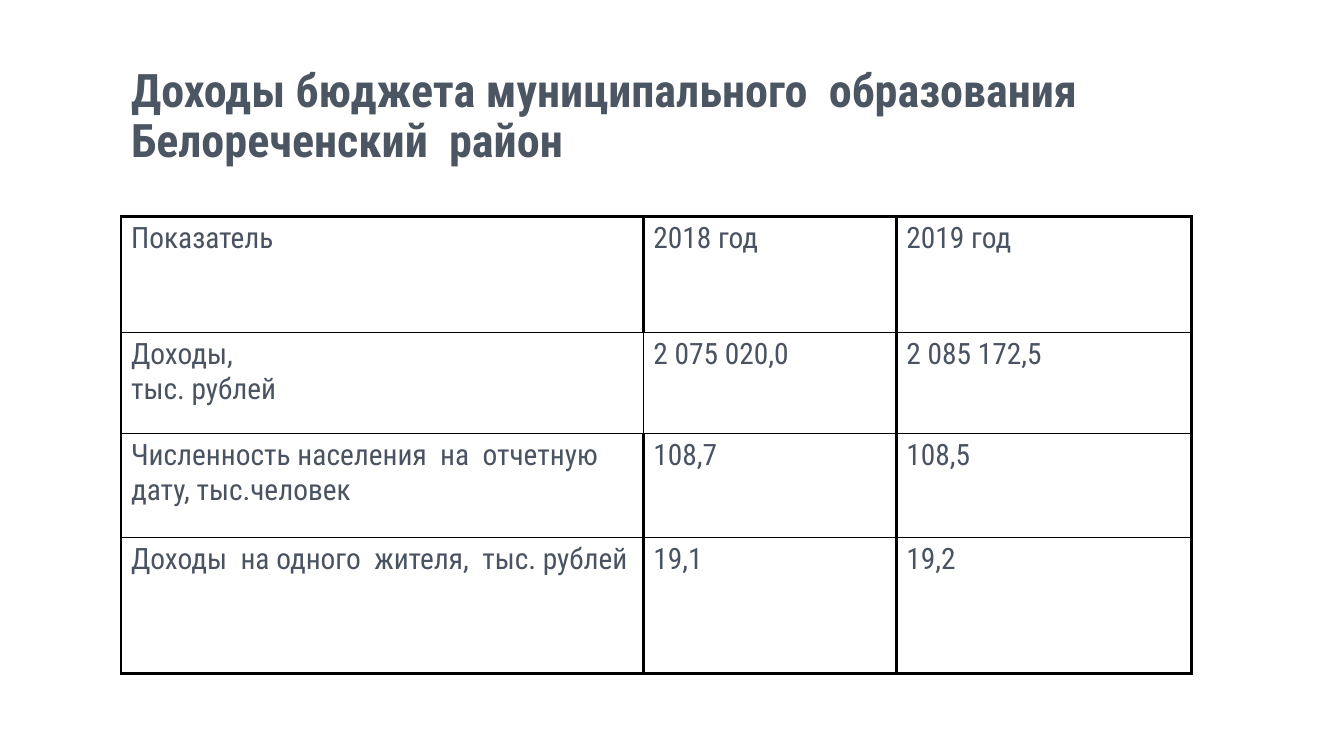
from dataclasses import dataclass

from lxml import etree
from pptx import Presentation
from pptx.dml.color import RGBColor
from pptx.enum.text import MSO_ANCHOR, MSO_AUTO_SIZE, PP_ALIGN
from pptx.oxml.ns import qn
from pptx.util import Inches, Pt

LEFT, MIDDLE, TOP = PP_ALIGN.LEFT, MSO_ANCHOR.MIDDLE, MSO_ANCHOR.TOP
NO_AUTOFIT = MSO_AUTO_SIZE.NONE
TITLE_ONLY = 5


@dataclass(frozen=True)
class Theme:
    font: str = "Roboto Condensed"
    title_color: str = "4C5662"
    text_color: str = "4A5362"
    border_color: str = "000000"
    title_size: float = 33
    text_size: float = 21
    thick: float = 2.25
    thin: float = 1


class SlideBuilder:
    def __init__(self, prs, theme):
        self.theme = theme
        self.slide = prs.slides.add_slide(prs.slide_layouts[TITLE_ONLY])

    def style(self, p, size, color, bold=False):
        p.alignment = LEFT
        p.font.name = self.theme.font
        p.font.size = Pt(size)
        p.font.bold = bold
        p.font.color.rgb = RGBColor.from_string(color)

    def title(self, text, left, top, width, height):
        sp = self.slide.shapes.title
        sp.left, sp.top = Inches(left), Inches(top)
        sp.width, sp.height = Inches(width), Inches(height)
        tf = sp.text_frame
        tf.text = text
        tf.word_wrap = True
        tf.auto_size = NO_AUTOFIT
        tf.vertical_anchor = MIDDLE
        p = tf.paragraphs[0]
        p.line_spacing = 0.9
        self.style(p, self.theme.title_size, self.theme.title_color, bold=True)

    def border(self, cell, side, width):
        tc_pr = cell._tc.get_or_add_tcPr()
        ln = etree.SubElement(tc_pr, qn(f"a:ln{side}"), w=str(Pt(width)))
        fill = etree.SubElement(ln, qn("a:solidFill"))
        etree.SubElement(fill, qn("a:srgbClr"), val=self.theme.border_color)

    def table(self, rows, left, top, col_widths, row_heights, thin_edges):
        """Thick frame and column lines, thin row lines; thin_edges holds
        the (row, column line) pairs that are thin too."""
        thick, thin = self.theme.thick, self.theme.thin
        table = self.slide.shapes.add_table(
            len(rows), len(col_widths), Inches(left), Inches(top),
            Inches(sum(col_widths)), Inches(sum(row_heights))).table
        table.first_row = table.horz_banding = False
        for column, width in zip(table.columns, col_widths):
            column.width = Inches(width)
        for row, height in zip(table.rows, row_heights):
            row.height = Inches(height)

        for i, texts in enumerate(rows):
            for j, text in enumerate(texts):
                cell = table.cell(i, j)
                cell.text = text
                cell.vertical_anchor = TOP
                for p in cell.text_frame.paragraphs:
                    self.style(p, self.theme.text_size, self.theme.text_color)
                # Borders come before the fill in the cell properties
                for side, edge in (("L", j), ("R", j + 1)):
                    self.border(cell, side, thin if (i, edge) in thin_edges else thick)
                for side, edge in (("T", i), ("B", i + 1)):
                    self.border(cell, side, thick if edge in (0, len(rows)) else thin)
                cell.fill.background()


def main():
    prs = Presentation()
    prs.slide_width, prs.slide_height = Inches(13.33), Inches(7.5)
    s = SlideBuilder(prs, Theme())

    # Heading
    s.title("Доходы бюджета муниципального  образования Белореченский  район",
            1.2, 0.42, 9.97, 1.5)

    # Budget income by year
    income_rows = [
        ("Показатель", "2018 год", "2019 год"),
        ("Доходы,\nтыс. рублей", "2 075 020,0", "2 085 172,5"),
        ("Численность населения  на  отчетную дату, тыс.человек", "108,7", "108,5"),
        ("Доходы  на одного  жителя,  тыс. рублей", "19,1", "19,2"),
    ]
    s.table(income_rows, 1.2, 2.15, col_widths=(5.18, 2.51, 2.93),
            row_heights=(1.15, 1, 1.03, 1.35), thin_edges={(1, 1)})

    prs.save("out.pptx")


if __name__ == "__main__":
    main()
